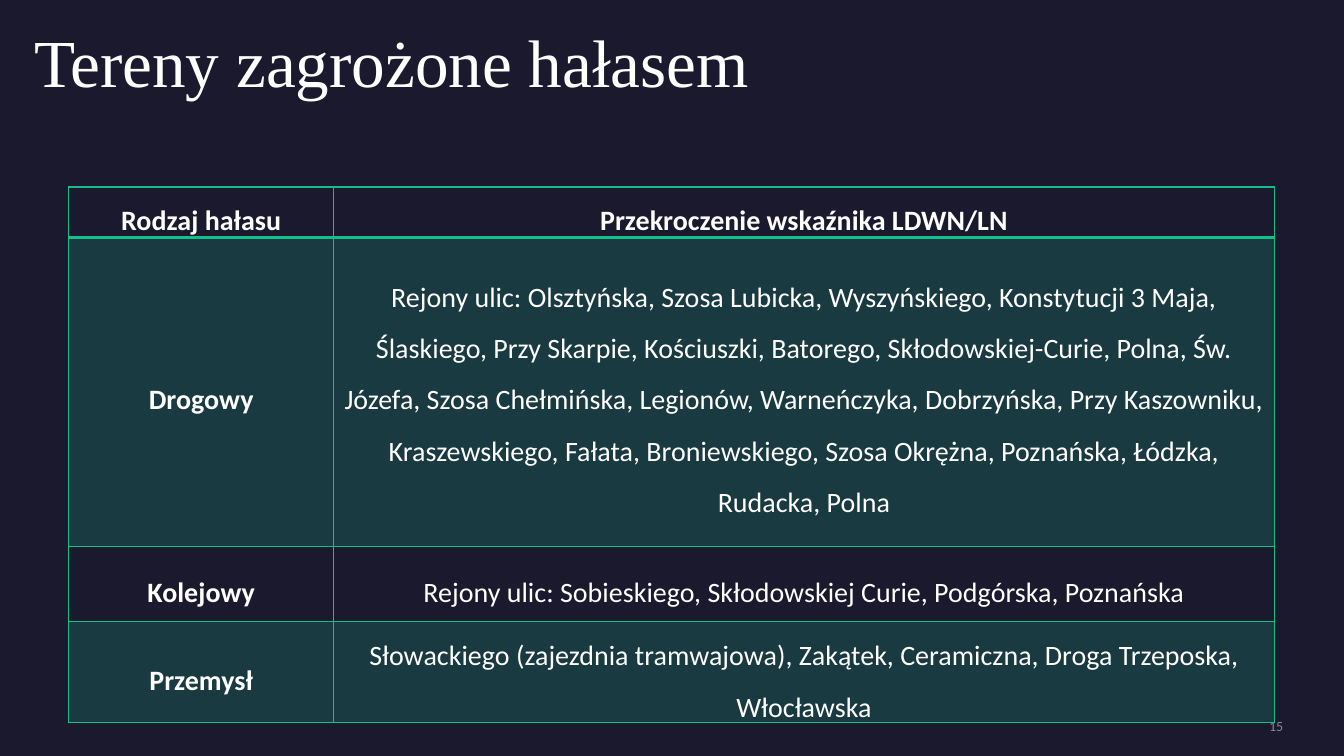
from lxml import etree
from pptx import Presentation
from pptx.dml.color import RGBColor
from pptx.enum.text import MSO_ANCHOR, PP_ALIGN
from pptx.oxml.ns import qn
from pptx.util import Cm, Pt

TOP, MIDDLE = MSO_ANCHOR.TOP, MSO_ANCHOR.MIDDLE
LEFT, CENTER, RIGHT = PP_ALIGN.LEFT, PP_ALIGN.CENTER, PP_ALIGN.RIGHT
NAVY, GREEN, WHITE, GREY = "1B192E", "13BE89", "FFFFFF", "A6A6A6"
COL_WIDTHS = (6.68, 23.7)
ROW_HEIGHTS = (1.22, 7.78, 1.91, 1.22)
ROWS = (
    ("Rodzaj hałasu", "Przekroczenie wskaźnika LDWN/LN"),
    ("Drogowy",
     "Rejony ulic: Olsztyńska, Szosa Lubicka, Wyszyńskiego, Konstytucji 3 Maja, "
     "Ślaskiego, Przy Skarpie, Kościuszki, Batorego, Skłodowskiej-Curie, Polna, "
     "Św. Józefa, Szosa Chełmińska, Legionów, Warneńczyka, Dobrzyńska, "
     "Przy Kaszowniku, Kraszewskiego, Fałata, Broniewskiego, Szosa Okrężna, "
     "Poznańska, Łódzka, Rudacka, Polna"),
    ("Kolejowy", "Rejony ulic: Sobieskiego, Skłodowskiej Curie, Podgórska, Poznańska"),
    ("Przemysł",
     "Słowackiego (zajezdnia tramwajowa), Zakątek, Ceramiczna, Droga Trzeposka, "
     "Włocławska"),
)


def paint(fill, color):
    """Fill with a solid hex colour."""
    fill.solid()
    fill.fore_color.rgb = RGBColor.from_string(color)


def set_alpha(element, percent):
    """Set the opacity of the solid fill inside an XML element."""
    clr = element.find(qn("a:solidFill"))[0]
    etree.SubElement(clr, qn("a:alpha"), val=str(percent * 1000))


def write(tf, text, font, size, color, align, spacing=1.0, bold=False):
    """Write one formatted paragraph and return its run."""
    tf.word_wrap = True
    p = tf.paragraphs[0]
    p.alignment, p.line_spacing = align, spacing
    r = p.add_run()
    r.text = text
    f = r.font
    f.name, f.size, f.bold = font, Pt(size), bold
    paint(f.fill, color)
    return r


def place(sp, left, top, width, height, anchor):
    """Position a text shape and remove its margins."""
    sp.left, sp.top, sp.width, sp.height = map(Cm, (left, top, width, height))
    tf = sp.text_frame
    tf.margin_left = tf.margin_right = tf.margin_top = tf.margin_bottom = 0
    tf.vertical_anchor = anchor
    return tf


def add_borders(cell, bottom):
    """Draw green lines on all four sides of a cell."""
    tc_pr = cell._tc.get_or_add_tcPr()
    for side, width in (("L", 1), ("R", 1), ("T", 1), ("B", bottom)):
        ln = etree.SubElement(tc_pr, qn(f"a:ln{side}"), w=str(Pt(width)))
        fill = etree.SubElement(ln, qn("a:solidFill"))
        etree.SubElement(fill, qn("a:srgbClr"), val=GREEN)


def format_cell(cell, text, row, col):
    """Fill in one cell, tinting every second row."""
    cell.margin_left = cell.margin_right = Cm(0.19)
    cell.margin_top = cell.margin_bottom = 0
    cell.vertical_anchor = MIDDLE
    write(cell.text_frame, text, "Calibri", 20, WHITE, CENTER, 1.5,
          row == 0 or col == 0)
    add_borders(cell, 2 if row == 0 else 1)
    if row % 2:
        paint(cell.fill, GREEN)
        set_alpha(cell._tc.tcPr, 20)
    else:
        cell.fill.background()


def add_noise_table(s):
    """Add the table of noise types and streets."""
    table = s.shapes.add_table(len(ROWS), len(COL_WIDTHS), Cm(1.73), Cm(4.71),
                               Cm(sum(COL_WIDTHS)), Cm(sum(ROW_HEIGHTS))).table
    for column, width in zip(table.columns, COL_WIDTHS):
        column.width = Cm(width)
    for i, (height, texts) in enumerate(zip(ROW_HEIGHTS, ROWS)):
        table.rows[i].height = Cm(height)
        for j, text in enumerate(texts):
            format_cell(table.cell(i, j), text, i, j)


def main():
    """Build and save the slide."""
    prs = Presentation()
    prs.slide_width, prs.slide_height = Cm(33.87), Cm(19.05)
    s = prs.slides.add_slide(prs.slide_layouts[5])
    paint(s.background.fill, NAVY)

    tf = place(s.shapes.title, 0.86, 0.74, 30.84, 3.71, TOP)
    write(tf, "Tereny zagrożone hałasem", "Times New Roman", 48, WHITE, LEFT, 0.9)

    number = s.shapes.add_textbox(0, 0, 0, 0)
    tf = place(number, 27.64, 18.08, 4.7, 0.43, MIDDLE)
    r = write(tf, "15", "Calibri", 10, GREY, RIGHT)
    set_alpha(r.font._element, 80)

    add_noise_table(s)
    prs.save("out.pptx")


if __name__ == "__main__":
    main()
